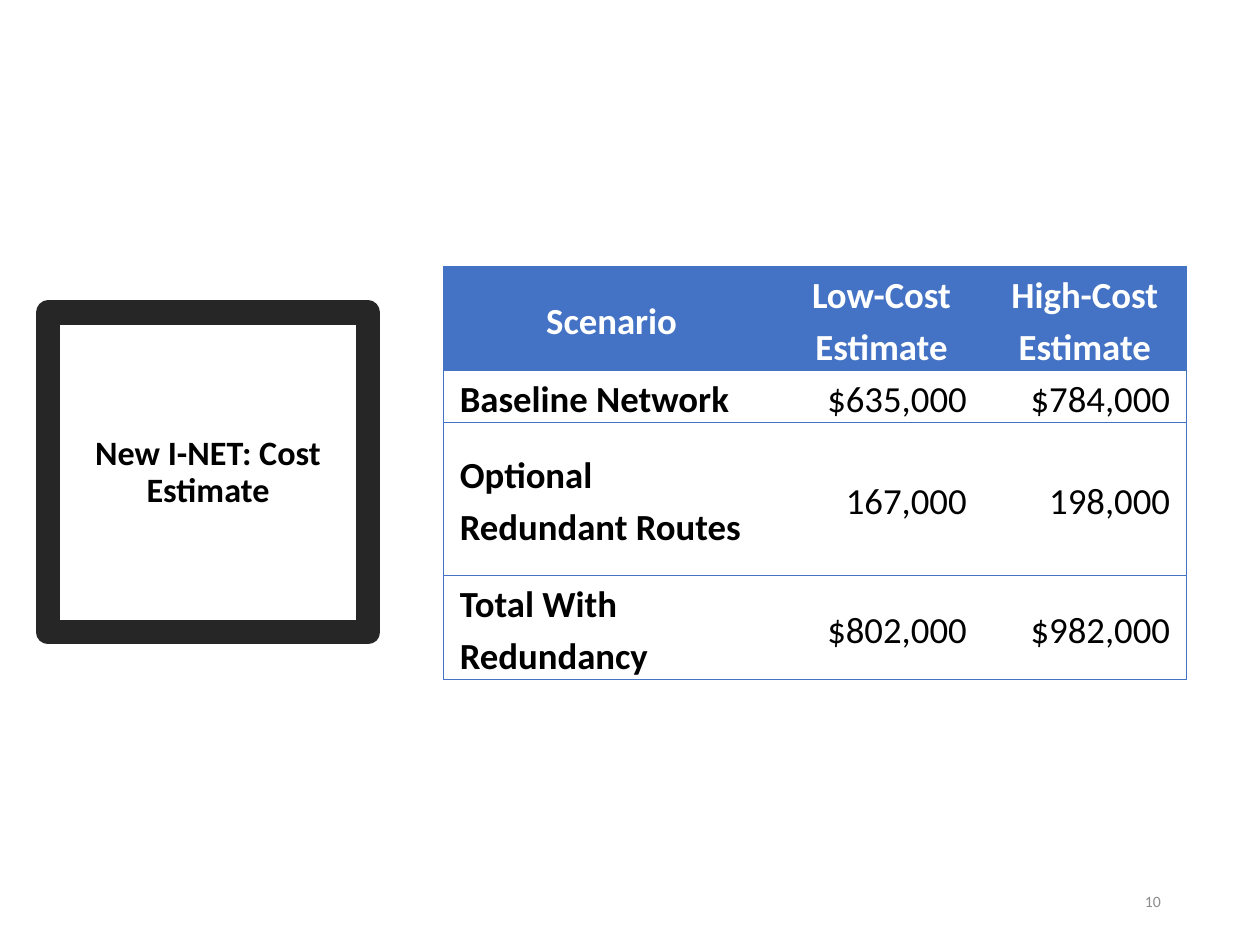
from lxml import etree
from pptx import Presentation
from pptx.dml.color import RGBColor
from pptx.enum.text import MSO_ANCHOR, MSO_AUTO_SIZE, PP_ALIGN
from pptx.oxml.ns import qn
from pptx.util import Cm, Pt

MIDDLE = MSO_ANCHOR.MIDDLE
NO_FIT = MSO_AUTO_SIZE.NONE
LEFT, CENTER, RIGHT = PP_ALIGN.LEFT, PP_ALIGN.CENTER, PP_ALIGN.RIGHT

FONT = "Calibri"
BLUE, WHITE, BLACK = "4472C4", "FFFFFF", "000000"
DARK, GRAY = "262626", "8C8C8C"

COLUMN_WIDTHS = [6.78, 4.1, 4.1]
ROW_HEIGHTS = [2.07, 1.04, 3.1, 2.07]
ESTIMATES = [
    ["Scenario", "Low-Cost Estimate", "High-Cost Estimate"],
    ["Baseline Network", "$635,000", "$784,000"],
    ["Optional Redundant Routes", "167,000", "198,000"],
    ["Total With Redundancy", "$802,000", "$982,000"],
]


def color(value):
    return RGBColor.from_string(value)


def write(frame, text, size, ink, align, bold=False, spacing=1.0):
    frame.word_wrap = True
    frame.vertical_anchor = MIDDLE
    para = frame.paragraphs[0]
    para.alignment = align
    para.line_spacing = spacing
    span = para.add_run()
    span.text = text
    span.font.name = FONT
    span.font.size = Pt(size)
    span.font.bold = bold
    span.font.color.rgb = color(ink)


def place(box, left, top, width, height):
    box.left, box.top = Cm(left), Cm(top)
    box.width, box.height = Cm(width), Cm(height)


def add_title(page, text):
    title = page.shapes.title
    place(title, 0.97, 6.3, 6.45, 6.45)
    title.fill.solid()
    title.fill.fore_color.rgb = color(WHITE)
    title.line.width = Pt(13.75)
    title.line.color.rgb = color(DARK)
    outline = title._element.spPr.find(qn("a:ln"))
    etree.SubElement(outline, qn("a:round"))
    title.text_frame.auto_size = NO_FIT
    write(title.text_frame, text, 19.5, BLACK, CENTER, True, 0.9)


def set_border(cell, side, visible):
    properties = cell._tc.get_or_add_tcPr()
    border = etree.SubElement(properties, qn(f"a:ln{side}"), w=str(Pt(0.5)))
    if visible:
        fill = etree.SubElement(border, qn("a:solidFill"))
        etree.SubElement(fill, qn("a:srgbClr"), val=BLUE)
    else:
        etree.SubElement(border, qn("a:noFill"))


def format_cell(cell, text, row, column):
    header, label = row == 0, column == 0
    last = column == len(COLUMN_WIDTHS) - 1
    for side, visible in (("L", label), ("R", last), ("T", True), ("B", True)):
        set_border(cell, side, visible)
    cell.fill.solid()
    cell.fill.fore_color.rgb = color(BLUE if header else WHITE)
    cell.margin_left = cell.margin_right = Cm(0.33)
    cell.margin_top = cell.margin_bottom = 0
    cell.vertical_anchor = MIDDLE
    align = CENTER if header else LEFT if label else RIGHT
    ink = WHITE if header else BLACK
    write(cell.text_frame, text, 21, ink, align, header or label, 1.15)


def add_estimates(page):
    frame = page.shapes.add_table(
        len(ROW_HEIGHTS), len(COLUMN_WIDTHS), Cm(8.94), Cm(5.38),
        Cm(sum(COLUMN_WIDTHS)), Cm(sum(ROW_HEIGHTS)))
    table = frame.table
    table.horz_banding = False
    for column, width in zip(table.columns, COLUMN_WIDTHS):
        column.width = Cm(width)
    for row, height in zip(table.rows, ROW_HEIGHTS):
        row.height = Cm(height)
    for row, texts in enumerate(ESTIMATES):
        for column, text in enumerate(texts):
            format_cell(table.cell(row, column), text, row, column)


def add_page_number(page, number):
    box = page.shapes.add_textbox(Cm(17.93), Cm(17.65), Cm(5.72), Cm(1.02))
    write(box.text_frame, number, 9, GRAY, RIGHT)


def main():
    deck = Presentation()
    deck.slide_width, deck.slide_height = Cm(25.4), Cm(19.05)
    page = deck.slides.add_slide(deck.slide_layouts.get_by_name("Title Only"))
    add_title(page, "New I-NET: Cost Estimate")
    add_estimates(page)
    add_page_number(page, "10")
    deck.save("out.pptx")


if __name__ == "__main__":
    main()
